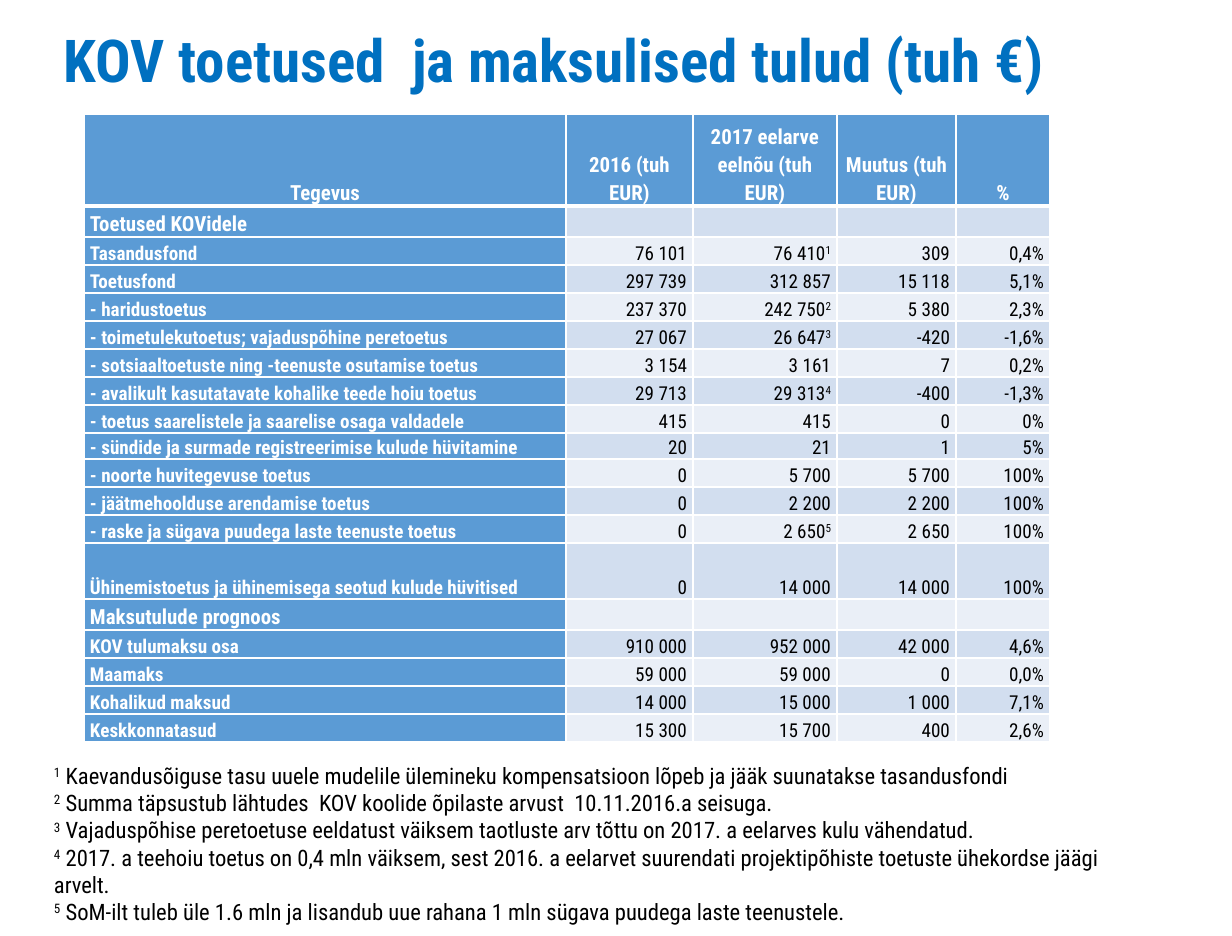
from lxml.etree import SubElement
from pptx import Presentation
from pptx.dml.color import RGBColor
from pptx.enum.text import MSO_ANCHOR, MSO_AUTO_SIZE, PP_ALIGN
from pptx.oxml.ns import qn
from pptx.util import Pt

EMU_PER_PX = 7303
FONT = "Roboto Condensed"
WHITE = RGBColor(0xFF, 0xFF, 0xFF)
BLACK = RGBColor(0x00, 0x00, 0x00)
TITLE_BLUE = RGBColor(0x00, 0x70, 0xC0)
HEADER_BLUE = RGBColor(0x5B, 0x9B, 0xD5)
BANDS = (RGBColor(0xD2, 0xDE, 0xEF), RGBColor(0xEA, 0xEF, 0xF7))

TITLE = "KOV toetused  ja maksulised tulud (tuh €)"
HEADER = ("Tegevus", "2016 (tuh EUR)", "2017 eelarve eelnõu (tuh EUR)", "Muutus (tuh EUR)", "%")
# A caret starts a superscript footnote mark; a row with a name only is a section.
ROWS = [
    ("Toetused KOVidele",),
    ("Tasandusfond", "76 101", "76 410^1", "309", "0,4%"),
    ("Toetusfond", "297 739", "312 857", "15 118", "5,1%"),
    ("- haridustoetus", "237 370", "242 750^2", "5 380", "2,3%"),
    ("- toimetulekutoetus; vajaduspõhine peretoetus", "27 067", "26 647^3", "-420", "-1,6%"),
    ("- sotsiaaltoetuste ning -teenuste osutamise toetus", "3 154", "3 161", "7", "0,2%"),
    ("- avalikult kasutatavate kohalike teede hoiu toetus", "29 713", "29 313^4", "-400", "-1,3%"),
    ("- toetus saarelistele ja saarelise osaga valdadele", "415", "415", "0", "0%"),
    ("- sündide ja surmade registreerimise kulude hüvitamine", "20", "21", "1", "5%"),
    ("- noorte huvitegevuse toetus", "0", "5 700", "5 700", "100%"),
    ("- jäätmehoolduse arendamise toetus", "0", "2 200", "2 200", "100%"),
    ("- raske ja sügava puudega laste teenuste toetus", "0", "2 650^5", "2 650", "100%"),
    ("Ühinemistoetus ja ühinemisega seotud kulude hüvitised", "0", "14 000", "14 000", "100%"),
    ("Maksutulude prognoos",),
    ("KOV tulumaksu osa", "910 000", "952 000", "42 000", "4,6%"),
    ("Maamaks", "59 000", "59 000", "0", "0,0%"),
    ("Kohalikud maksud", "14 000", "15 000", "1 000", "7,1%"),
    ("Keskkonnatasud", "15 300", "15 700", "400", "2,6%"),
]
COLUMN_WIDTHS = (482, 127, 144, 119, 94)
ROW_HEIGHT, SECTION_HEIGHT = 28, 31
SPECIAL_HEIGHTS = {0: 92, 9: 26, 13: 56}
NOTES = [
    " Kaevandusõiguse tasu uuele mudelile ülemineku kompensatsioon lõpeb ja jääk suunatakse tasandusfondi",
    " Summa täpsustub lähtudes  KOV koolide õpilaste arvust  10.11.2016.a seisuga.",
    " Vajaduspõhise peretoetuse eeldatust väiksem taotluste arv tõttu on 2017. a eelarves kulu vähendatud.",
    " 2017. a teehoiu toetus on 0,4 mln väiksem, sest 2016. a eelarvet suurendati projektipõhiste "
    "toetuste ühekordse jäägi arvelt.",
    " SoM-ilt tuleb üle 1.6 mln ja lisandub uue rahana 1 mln sügava puudega laste teenustele.",
]


def px(length):
    return length * EMU_PER_PX


def add_span(para, text, size, color, bold=False, raised=False):
    span = para.add_run()
    span.text = text
    font = span.font
    font.name, font.size, font.bold = FONT, Pt(size), bold
    font.color.rgb = color
    if raised:
        span._r.get_or_add_rPr().set("baseline", "30000")


def place_text(shape, box):
    """Move a placeholder to the box and give it plain, top-anchored text."""
    shape.left, shape.top, shape.width, shape.height = map(px, box)
    frame = shape.text_frame
    frame.word_wrap = True
    frame.auto_size = MSO_AUTO_SIZE.NONE
    frame.vertical_anchor = MSO_ANCHOR.TOP
    frame.margin_left = frame.margin_right = frame.margin_bottom = 0
    frame.margin_top = px(8)
    return frame


def add_title(slide, box):
    para = place_text(slide.shapes.title, box).paragraphs[0]
    para.alignment = PP_ALIGN.LEFT
    para.line_spacing = 0.88
    add_span(para, TITLE, 34, TITLE_BLUE, bold=True)


def set_borders(cell, top=1, bottom=1):
    properties = cell._tc.get_or_add_tcPr()
    for side, width in (("L", 1), ("R", 1), ("T", top), ("B", bottom)):
        line = SubElement(properties, qn(f"a:ln{side}"), w=str(Pt(width)))
        fill = SubElement(line, qn("a:solidFill"))
        SubElement(fill, qn("a:srgbClr"), val=str(WHITE))


def fill_cell(cell, text, size, fill, color, bold, alignment):
    cell.fill.solid()
    cell.fill.fore_color.rgb = fill
    cell.vertical_anchor = MSO_ANCHOR.BOTTOM
    cell.margin_left = cell.margin_right = px(6)
    cell.margin_top = cell.margin_bottom = 0
    para = cell.text_frame.paragraphs[0]
    para.alignment = alignment
    para.line_spacing = 1.15
    value, _, mark = text.partition("^")
    if value:
        add_span(para, value, size, color, bold)
    else:
        SubElement(para._p, qn("a:endParaRPr"), sz=str(size * 100))
    if mark:
        add_span(para, mark, size, color, bold, raised=True)


def add_budget_table(slide, box):
    records = [HEADER, *ROWS]
    frame = slide.shapes.add_table(len(records), len(HEADER), *map(px, box))
    table = frame.table
    for column, width in zip(table.columns, COLUMN_WIDTHS):
        column.width = px(width)
    for r, record in enumerate(records):
        is_header, is_section = r == 0, len(record) == 1
        height = SECTION_HEIGHT if is_section else ROW_HEIGHT
        table.rows[r].height = px(SPECIAL_HEIGHTS.get(r, height))
        size = 12 if is_header or is_section else 11
        for c in range(len(HEADER)):
            cell = table.cell(r, c)
            set_borders(cell, top=3 if r == 1 else 1, bottom=3 if is_header else 1)
            text = record[c] if c < len(record) else ""
            if is_header:
                fill_cell(cell, text, size, HEADER_BLUE, WHITE, True, PP_ALIGN.CENTER)
            elif c == 0:
                fill_cell(cell, text, size, HEADER_BLUE, WHITE, True, PP_ALIGN.LEFT)
            else:
                fill_cell(cell, text, size, BANDS[(r - 1) % 2], BLACK, False, PP_ALIGN.RIGHT)


def add_notes(slide, box):
    """Fill the body placeholder with the numbered footnotes."""
    frame = place_text(slide.placeholders[1], box)
    for number, note in enumerate(NOTES, start=1):
        para = frame.paragraphs[0] if number == 1 else frame.add_paragraph()
        para.alignment = PP_ALIGN.LEFT
        para.line_spacing = 1.0
        para.space_before = para.space_after = Pt(0)
        properties = para._p.get_or_add_pPr()
        properties.set("marL", "0")
        properties.set("indent", "0")
        SubElement(properties, qn("a:buNone"))
        add_span(para, str(number), 13, BLACK, raised=True)
        add_span(para, note, 13, BLACK)


def main():
    deck = Presentation()
    deck.slide_width, deck.slide_height = px(1232), px(936)
    slide = deck.slides.add_slide(deck.slide_layouts[1])
    add_title(slide, (64, 25, 1079, 79))
    add_budget_table(slide, (84, 114, sum(COLUMN_WIDTHS), 628))
    add_notes(slide, (54, 754, 1079, 148))
    deck.save("out.pptx")


if __name__ == "__main__":
    main()
